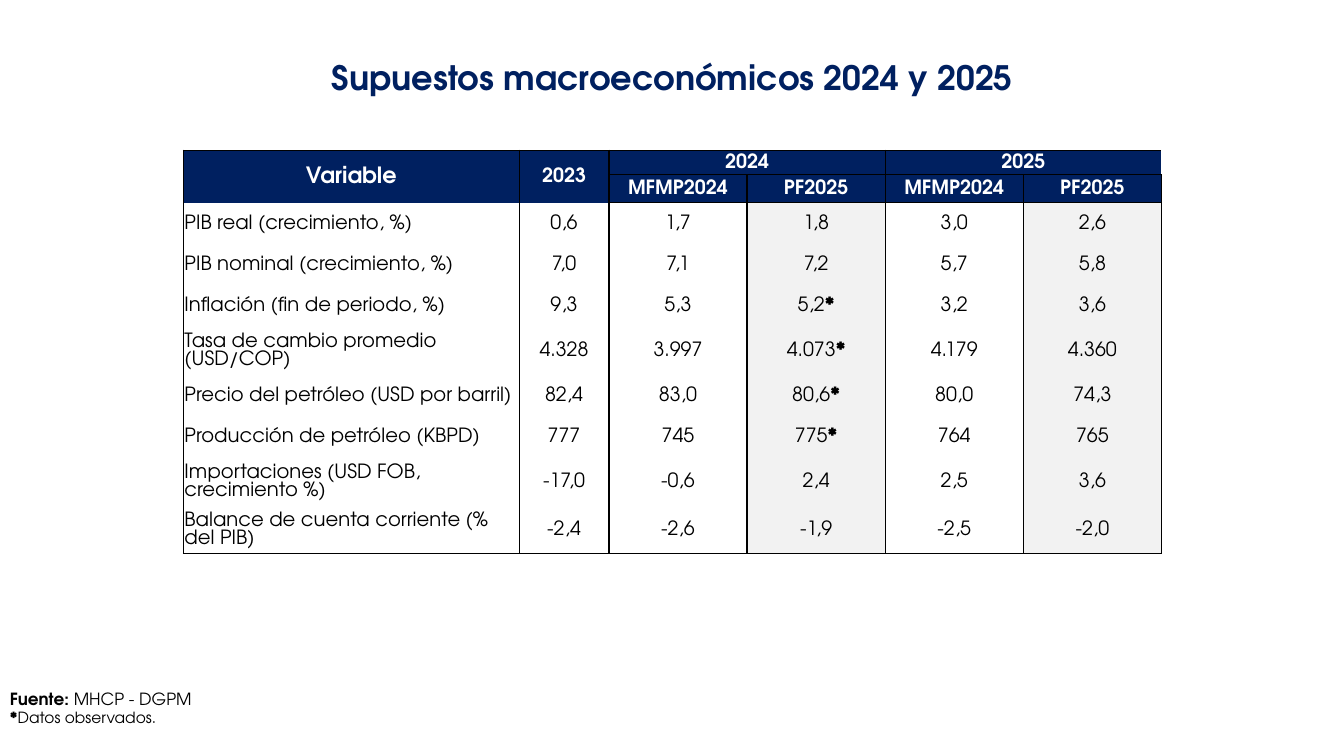
from dataclasses import dataclass

from lxml.etree import SubElement
from pptx import Presentation
from pptx.dml.color import RGBColor
from pptx.enum.text import MSO_ANCHOR, PP_ALIGN
from pptx.oxml.ns import qn
from pptx.util import Inches, Pt

WIDTH, HEIGHT = Inches(13.33), Inches(7.5)


@dataclass(frozen=True)
class Theme:
    font: str = "TeX Gyre Adventor"
    navy: str = "002060"
    white: str = "FFFFFF"
    black: str = "000000"
    shade: str = "F2F2F2"
    title: int = 24
    heading: int = 16
    body: int = 14
    source: int = 12
    note: int = 11


THEME = Theme()
NO_STYLE = "{2D5ABB26-0587-4C30-8999-92F81FD0307C}"
COLUMNS = [24.98, 6.68] + [10.28] * 4
HEADER_ROWS = [3.07] * 2
BODY_ROW = 5.47
SHADED = (3, 5)
RULED = (0, 1, 2, 4)

HEADER = [
    ["Variable", "2023", "2024", "", "2025", ""],
    ["", "", "MFMP2024", "PF2025", "MFMP2024", "PF2025"],
]
MERGES = [(0, 0, 1, 0), (0, 1, 1, 1), (0, 2, 0, 3), (0, 4, 0, 5)]
ASSUMPTIONS = [
    ["PIB real (crecimiento, %)", "0,6", "1,7", "1,8", "3,0", "2,6"],
    ["PIB nominal (crecimiento, %)", "7,0", "7,1", "7,2", "5,7", "5,8"],
    ["Inflación (fin de periodo, %)", "9,3", "5,3", "5,2*", "3,2", "3,6"],
    ["Tasa de cambio promedio (USD/COP)", "4.328", "3.997", "4.073*", "4.179", "4.360"],
    ["Precio del petróleo (USD por barril)", "82,4", "83,0", "80,6*", "80,0", "74,3"],
    ["Producción de petróleo (KBPD)", "777", "745", "775*", "764", "765"],
    ["Importaciones (USD FOB, crecimiento %)", "-17,0", "-0,6", "2,4", "2,5", "3,6"],
    ["Balance de cuenta corriente (% del PIB)", "-2,4", "-2,6", "-1,9", "-2,5", "-2,0"],
]


def across(share):
    """Turn a percentage of the slide's width into a length."""
    return int(WIDTH * share / 100)


def down(share):
    """Turn a percentage of the slide's height into a length."""
    return int(HEIGHT * share / 100)


def add_run(p, text, size=THEME.body, color=THEME.black, bold=False):
    r = p.add_run()
    r.text = text
    r.font.name = THEME.font
    r.font.size = Pt(size)
    r.font.bold = bold
    r.font.color.rgb = RGBColor.from_string(color)


def add_text_box(slide, x, y, w, h):
    sp = slide.shapes.add_textbox(across(x), down(y), across(w), down(h))
    sp.text_frame.word_wrap = True
    return sp.text_frame


def add_title(slide, text):
    p = add_text_box(slide, 3.68, 7.47, 92.65, 6.13).paragraphs[0]
    p.alignment = PP_ALIGN.CENTER
    p.line_spacing = 0.9
    add_run(p, text, size=THEME.title, color=THEME.navy, bold=True)


def add_source(slide):
    tf = add_text_box(slide, 0, 90.4, 81.32, 6.53)
    p = tf.paragraphs[0]
    add_run(p, "Fuente: ", size=THEME.source, bold=True)
    add_run(p, "MHCP - DGPM", size=THEME.source)
    p = tf.add_paragraph()
    add_run(p, "*", size=THEME.note, bold=True)
    add_run(p, "Datos observados.", size=THEME.note)


def set_fill(cell, color):
    if color:
        cell.fill.solid()
        cell.fill.fore_color.rgb = RGBColor.from_string(color)
    else:
        cell.fill.background()


def set_borders(cell, sides):
    """Draw thin lines on the sides given, in the schema order L, R, T, B."""
    tcPr = cell._tc.get_or_add_tcPr()
    for i, side in enumerate(s for s in "LRTB" if s in sides):
        ln = SubElement(tcPr, qn(f"a:ln{side}"), w=str(Pt(1)))
        fill = SubElement(ln, qn("a:solidFill"))
        SubElement(fill, qn("a:srgbClr"), val=THEME.black)
        tcPr.insert(i, ln)


def border_sides(row, col, last_row):
    sides = set()
    if col in RULED and (row, col) != (0, 4):
        sides.add("L")
    if col == 5 or (col + 1 in RULED and (row, col) != (0, 3)):
        sides.add("R")
    if row == 0 or (row == 1 and col > 1):
        sides.add("T")
    if row == last_row or (row == 0 and col > 1):
        sides.add("B")
    return sides


def write_cell(cell, text, row, col):
    cell.vertical_anchor = MSO_ANCHOR.MIDDLE
    cell.margin_left = cell.margin_right = cell.margin_top = Inches(0.01)
    cell.margin_bottom = 0
    header = row < len(HEADER)
    p = cell.text_frame.paragraphs[0]
    p.alignment = PP_ALIGN.CENTER if header or col else PP_ALIGN.LEFT
    if header:
        set_fill(cell, THEME.navy)
        size = THEME.body if col else THEME.heading
        if text:
            add_run(p, text, size=size, color=THEME.white, bold=True)
        else:
            p.font.size = Pt(THEME.body)
    else:
        set_fill(cell, THEME.shade if col in SHADED else None)
        add_run(p, text.rstrip("*"))
        if text.endswith("*"):
            add_run(p, "*", bold=True)


def add_assumptions_table(slide):
    data = HEADER + ASSUMPTIONS
    heights = HEADER_ROWS + [BODY_ROW] * len(ASSUMPTIONS)
    frame = slide.shapes.add_table(
        len(data), len(COLUMNS), across(13.65), down(19.87),
        across(sum(COLUMNS)), down(sum(heights)))
    table = frame.table
    table.first_row = table.horz_banding = False
    table._tbl.tblPr.find(qn("a:tableStyleId")).text = NO_STYLE
    for column, share in zip(table.columns, COLUMNS):
        column.width = across(share)
    for row, share in zip(table.rows, heights):
        row.height = down(share)
    for i, texts in enumerate(data):
        for j, text in enumerate(texts):
            write_cell(table.cell(i, j), text, i, j)
            set_borders(table.cell(i, j), border_sides(i, j, len(data) - 1))
    for top, left, bottom, right in MERGES:
        table.cell(top, left).merge(table.cell(bottom, right))


def main():
    prs = Presentation()
    prs.slide_width, prs.slide_height = WIDTH, HEIGHT
    slide = prs.slides.add_slide(prs.slide_layouts[6])
    add_title(slide, "Supuestos macroeconómicos 2024 y 2025")
    add_assumptions_table(slide)
    add_source(slide)
    prs.save("out.pptx")


if __name__ == "__main__":
    main()
